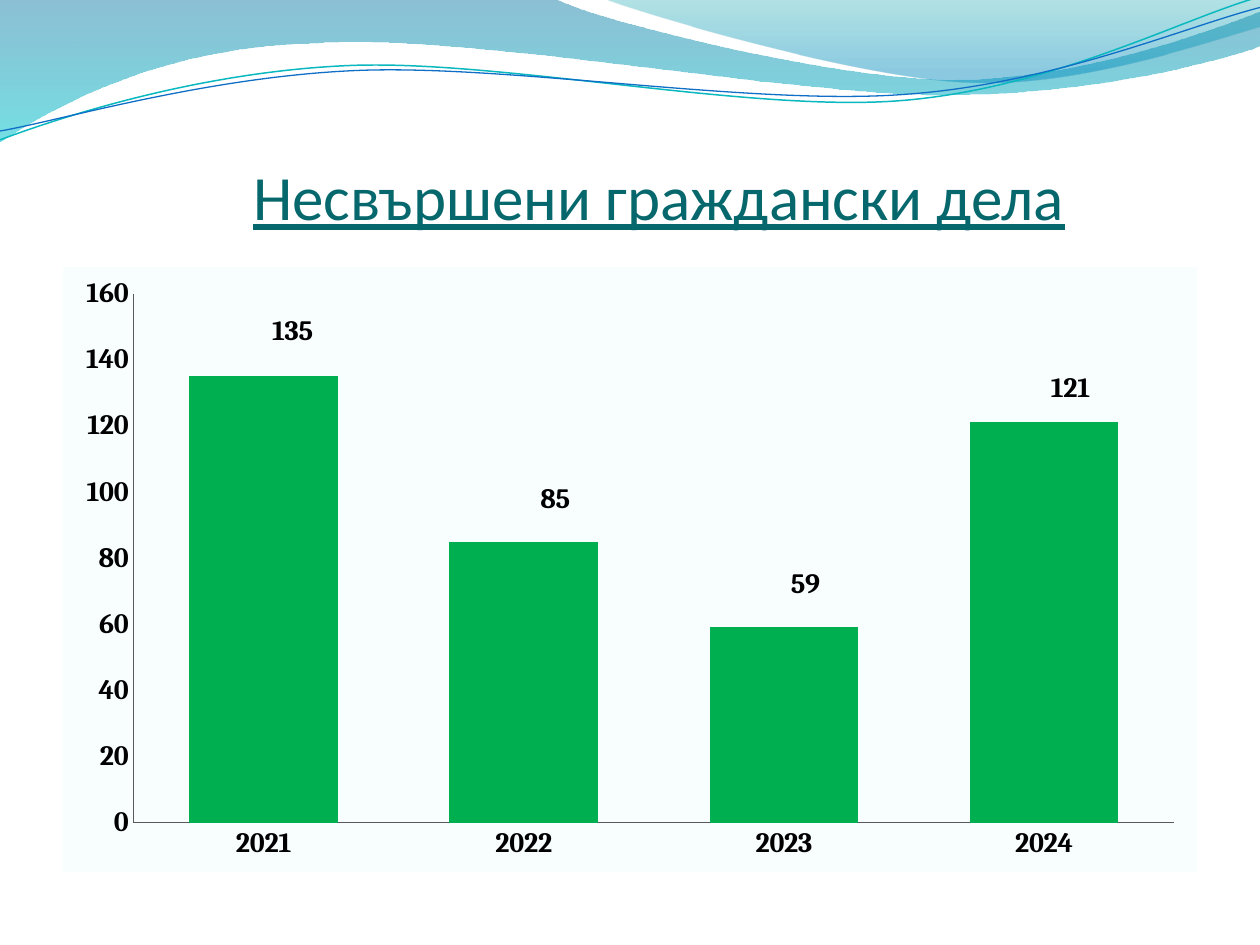
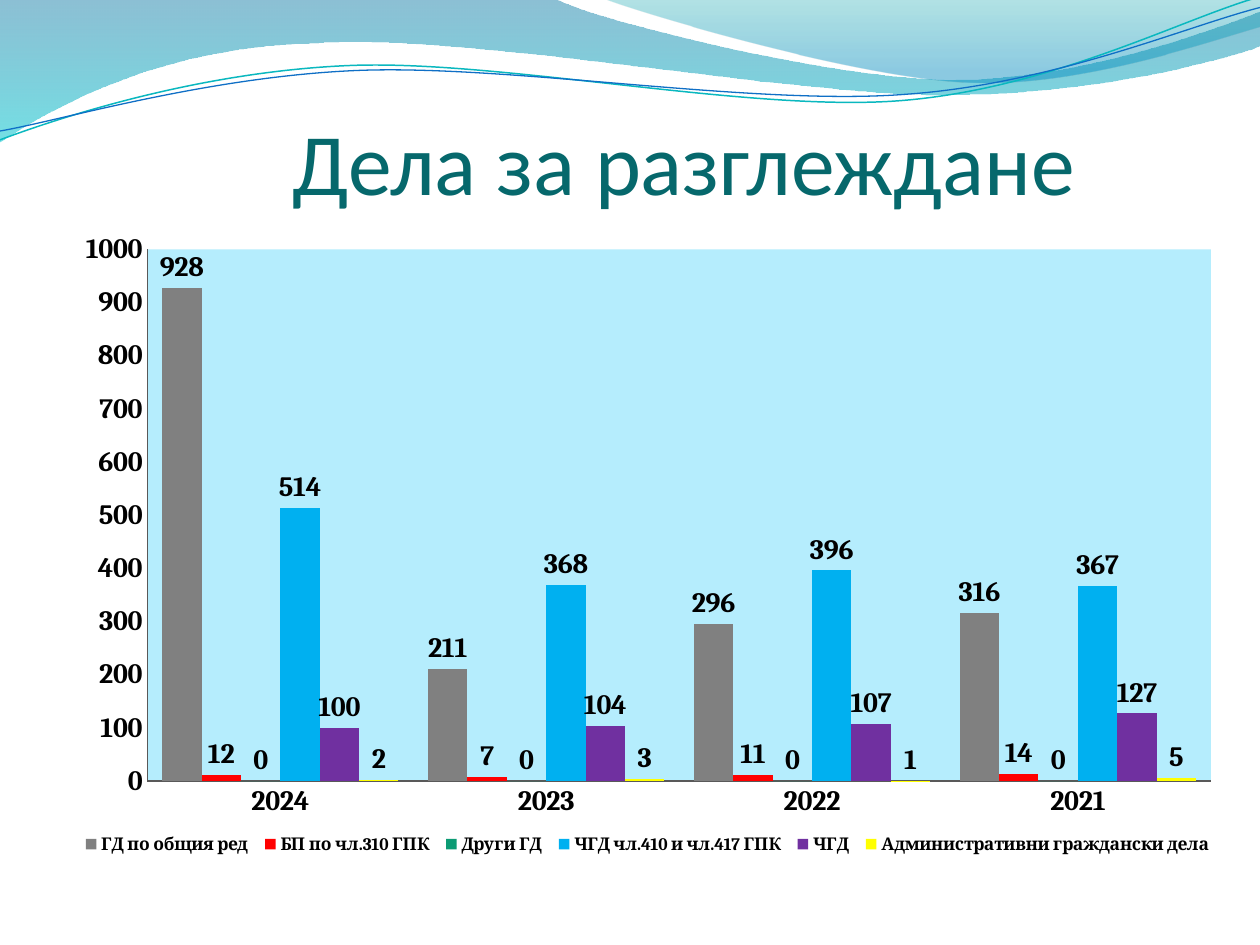
from math import cos, radians, sin

from lxml.etree import SubElement, fromstring
from pptx import Presentation
from pptx.chart.data import CategoryChartData
from pptx.dml.color import RGBColor
from pptx.enum.chart import XL_CHART_TYPE as CT, XL_LABEL_POSITION as LP
from pptx.enum.chart import XL_LEGEND_POSITION as LEG, XL_TICK_MARK as TICK
from pptx.enum.text import MSO_ANCHOR as ANCHOR
from pptx.oxml.ns import nsdecls, qn
from pptx.util import Inches, Pt

COLORS = {
    "title": "06686C", "text": "000000", "axis": "595959",
    "wave_top": "0074A1", "wave_bottom": "00C6CF",
    "crest_top": "00A1A9", "crest_bottom": "008BBF",
    "teal_line": "0AB8BF", "blue_line": "0F6FC6",
    "panel": "F8FDFE", "plot": "B5EDFD",
    "green": "00B050", "grey": "808080", "red": "FF0000", "sea": "0C9B74",
    "sky": "00B0F0", "purple": "7030A0", "yellow": "FFFF00",
}
TITLE_FONT, CHART_FONT = "Calibri", "Cambria"
LINE_TILT = 357.3
C15 = "http://schemas.microsoft.com/office/drawing/2012/chart"

WAVE = [[(0, 0)], [(4.4, -0.01)],
        [(4.76, 0.17), (6.64, 0.63), (7.58, 0.63)],
        [(8.53, 0.63), (9.58, 0.26), (10, 0.09)], [(10.01, 0.36)],
        [(9.83, 0.44), (8.7, 0.76), (7.46, 0.75)],
        [(6.22, 0.75), (3.82, 0.28), (2.57, 0.34)],
        [(1.29, 0.36), (0.46, 0.83), (-0.01, 1.13)], [(0, 0)]]
CREST = [[(4.79, -0.01)],
         [(5.09, 0.11), (6.82, 0.62), (7.69, 0.65)],
         [(8.56, 0.69), (9.61, 0.32), (10, 0.21)], [(10, 0)], [(4.79, -0.01)]]
TEAL_LINE = [[(0, 1.11)],
             [(0.48, 0.93), (1.58, 0.57), (2.77, 0.52)],
             [(3.95, 0.47), (5.93, 0.89), (7.13, 0.8)],
             [(8.33, 0.71), (9.38, 0.15), (9.98, -0.02)]]
BLUE_LINE = [[(0, 1.04)],
             [(0.47, 0.96), (1.64, 0.61), (2.83, 0.56)],
             [(4.03, 0.51), (5.97, 0.84), (7.17, 0.75)],
             [(8.36, 0.67), (9.41, 0.21), (10, 0.06)]]

YEARS = ["2021", "2022", "2023", "2024"]
PENDING = [("Series 1", "green", [135, 85, 59, 121])]
LABEL_SHIFTS = [(0.23, -0.19), (0.25, -0.17), (0.17, -0.18), (0.21, -0.11)]
CASES = [
    ("ГД по общия ред", "grey", [928, 211, 296, 316]),
    ("БП по чл.310 ГПК", "red", [12, 7, 11, 14]),
    ("Други ГД", "sea", [0, 0, 0, 0]),
    ("ЧГД чл.410 и чл.417 ГПК", "sky", [514, 368, 396, 367]),
    ("ЧГД", "purple", [100, 104, 107, 127]),
    ("Административни граждански дела", "yellow", [2, 3, 1, 5]),
]


def rgb(name):
    """Return the named colour."""
    return RGBColor.from_string(COLORS[name])


def style_font(font, size, color="text", name=CHART_FONT, bold=False, underline=False):
    """Format one font."""
    font.name, font.size, font.bold, font.underline = name, Pt(size), bold, underline
    font.color.rgb = rgb(color)


def add_text(slide, box, text, indent=0, **fmt):
    """Add a bottom-anchored text box."""
    tf = slide.shapes.add_textbox(*map(Inches, box)).text_frame
    tf.word_wrap, tf.vertical_anchor = True, ANCHOR.BOTTOM
    tf.margin_left, tf.margin_top = Inches(indent), Inches(0.05)
    tf.margin_right = tf.margin_bottom = 0
    r = tf.paragraphs[0].add_run()
    r.text = text
    style_font(r.font, **fmt)


def add_title(slide, box, text, size, **fmt):
    """Add the slide title."""
    add_text(slide, box, text, size=size, color="title", name=TITLE_FONT, **fmt)


def turn(point, center, degrees):
    """Turn a point clockwise about a centre."""
    dx, dy = point[0] - center[0], point[1] - center[1]
    c, s = cos(radians(degrees)), sin(radians(degrees))
    return center[0] + dx * c - dy * s, center[1] + dx * s + dy * c


def add_outline(slide, segments, closed):
    """Draw straight and cubic segments as a freeform without shadow."""
    start, *points = [(Inches(x), Inches(y)) for segment in segments for x, y in segment]
    builder = slide.shapes.build_freeform(*start)
    builder.add_line_segments(points, close=closed)
    sp = builder.convert_to_shape()
    sp.shadow.inherit = False
    steps = iter(list(sp.element.iter(qn("a:lnTo"))))
    for segment in segments[1:]:
        first, *others = [next(steps) for _ in segment]
        if others:
            curve = first.makeelement(qn("a:cubicBezTo"))
            first.addprevious(curve)
            for step in (first, *others):
                curve.append(step[0])
                step.getparent().remove(step)
    return sp


def add_wave(slide, segments, stops):
    """Add a wave with a translucent downward gradient."""
    sp = add_outline(slide, segments, True)
    sp.line.fill.background()
    sp.fill.gradient()
    sp.fill.gradient_angle = 270
    for stop, (position, color, _) in zip(sp.fill.gradient_stops, stops):
        stop.position, stop.color.rgb = position, rgb(color)
    gradient = sp.element.spPr.find(qn("a:gradFill"))
    for clr, (_, _, alpha) in zip(gradient.iter(qn("a:srgbClr")), stops):
        SubElement(clr, qn("a:alpha"), val=str(alpha * 1000))


def add_wave_line(slide, segments, center, color, width):
    """Add a thin, slightly tilted curve."""
    level = [[turn(point, center, -LINE_TILT) for point in segment] for segment in segments]
    sp = add_outline(slide, level, False)
    sp.rotation = LINE_TILT
    sp.fill.background()
    sp.line.color.rgb, sp.line.width = rgb(color), Pt(width)


def add_header(slide):
    """Add the wave header shared by the slides."""
    add_wave(slide, WAVE, [(0, "wave_top", 45), (1, "wave_bottom", 55)])
    add_wave(slide, CREST, [(0, "crest_top", 30), (0.8, "crest_bottom", 45)])
    add_wave_line(slide, TEAL_LINE, (4.99, 0.58), "teal_line", 0.85)
    add_wave_line(slide, BLUE_LINE, (5, 0.59), "blue_line", 0.75)


def set_layout(element, index, box, lengths, edge=True):
    """Place a chart part by lengths relative to the chart box."""
    for old in element.findall(qn("c:layout")):
        element.remove(old)
    target = '<c:layoutTarget val="inner"/>' if element.tag == qn("c:plotArea") else ""
    modes = '<c:xMode val="edge"/><c:yMode val="edge"/>' if edge else ""
    values = "".join(f'<c:{tag} val="{length / full}"/>'
                     for tag, length, full in zip("xywh", lengths, box[2:] * 2))
    element.insert(index, fromstring(
        f'<c:layout {nsdecls("c")}><c:manualLayout>{target}{modes}{values}'
        "</c:manualLayout></c:layout>"))


def chart_fill(color):
    """Return chart shape properties with a solid fill and no line."""
    return fromstring(f'<c:spPr {nsdecls("c", "a")}><a:solidFill><a:srgbClr val="{COLORS[color]}"/>'
                      "</a:solidFill><a:ln><a:noFill/></a:ln></c:spPr>")


def style_axis(axis):
    """Format an axis with bold labels and no grid or ticks."""
    axis.has_major_gridlines = False
    axis.major_tick_mark = axis.minor_tick_mark = TICK.NONE
    axis.format.line.color.rgb, axis.format.line.width = rgb("axis"), Pt(1)
    style_font(axis.tick_labels.font, 16, bold=True)


def style_series(series, color):
    """Fill a series and show its values above the columns."""
    series.invert_if_negative = False
    series.format.fill.solid()
    series.format.fill.fore_color.rgb = rgb(color)
    labels = series.data_labels
    labels.show_value, labels.position = True, LP.OUTSIDE_END
    style_font(labels.font, 16, bold=True)


def add_column_chart(slide, box, years, rows, plot, top, step):
    """Add a clustered column chart with value labels."""
    data = CategoryChartData()
    data.categories = years
    for name, _, values in rows:
        data.add_series(name, values)
    chart = slide.shapes.add_chart(CT.COLUMN_CLUSTERED, *map(Inches, box), data).chart
    chart.has_title = chart.has_legend = False
    style_font(chart.font, 10)
    style_axis(chart.category_axis)
    style_axis(chart.value_axis)
    chart.value_axis.minimum_scale, chart.value_axis.maximum_scale = 0, top
    chart.value_axis.major_unit = step
    columns = chart.plots[0]
    columns.gap_width, columns.overlap, columns.vary_by_categories = 75, 0, False
    for series, (_, color, _) in zip(columns.series, rows):
        style_series(series, color)
    area = chart.element.find(".//" + qn("c:plotArea"))
    set_layout(area, 0, box, plot)
    return chart, area


def hide_leader_lines(chart):
    """Hide the lines between columns and moved labels."""
    for labels in chart.element.iter(qn("c:dLbls")):
        for leader in labels.findall(qn("c:showLeaderLines")):
            leader.set("val", "0")
        labels.append(fromstring(
            f'<c:extLst {nsdecls("c")}><c:ext uri="{{CE6537A1-D6FC-4f65-9D91-7224C49458BB}}" '
            f'xmlns:c15="{C15}"><c15:showLeaderLines val="0"/></c:ext></c:extLst>'))


def shift_labels(chart, box, shifts):
    """Move the value labels of the first series."""
    points = chart.plots[0].series[0].points
    for i in range(len(shifts)):
        label = points[i].data_label
        style_font(label.font, 16, bold=True)
        label.position = LP.OUTSIDE_END
    for element, shift in zip(chart.element.iter(qn("c:dLbl")), shifts):
        set_layout(element, 1, box, shift, edge=False)
    hide_leader_lines(chart)


def add_legend(chart, box, lengths):
    """Add a one-row legend under the plot."""
    chart.has_legend = True
    legend = chart.legend
    legend.position, legend.include_in_layout = LEG.BOTTOM, False
    style_font(legend.font, 10, bold=True)
    set_layout(chart.element.find(".//" + qn("c:legend")), 1, box, lengths)


def pending_slide(slide):
    """Build the slide of pending civil cases."""
    add_header(slide)
    add_title(slide, (2.01, 0.6, 6.47, 1.25), "Несвършени граждански дела", 36, underline=True)
    box = (0.5, 2.12, 9, 4.8)
    chart, _ = add_column_chart(slide, box, YEARS, PENDING, (0.56, 0.21, 8.26, 4.2), 160, 20)
    shift_labels(chart, box, LABEL_SHIFTS)
    chart.element.find(qn("c:txPr")).addprevious(chart_fill("panel"))


def cases_slide(slide):
    """Build the slide of cases for hearing by kind."""
    add_header(slide)
    add_title(slide, (0.43, 0.44, 9, 1.25), "Дела за разглеждане", 50, indent=1.89)
    box = (0.5, 1.75, 9.3, 5.15)
    chart, area = add_column_chart(slide, box, YEARS[::-1], CASES,
                                   (0.67, 0.23, 8.44, 4.22), 1000, 100)
    add_legend(chart, box, (0.09, 4.82, 9.1, 0.26))
    area.append(chart_fill("plot"))


def main():
    """Build and save the presentation."""
    prs = Presentation()
    prs.slide_width, prs.slide_height = Inches(10), Inches(7.5)
    for build in (pending_slide, cases_slide):
        build(prs.slides.add_slide(prs.slide_layouts[6]))
    prs.save("out.pptx")


if __name__ == "__main__":
    main()
